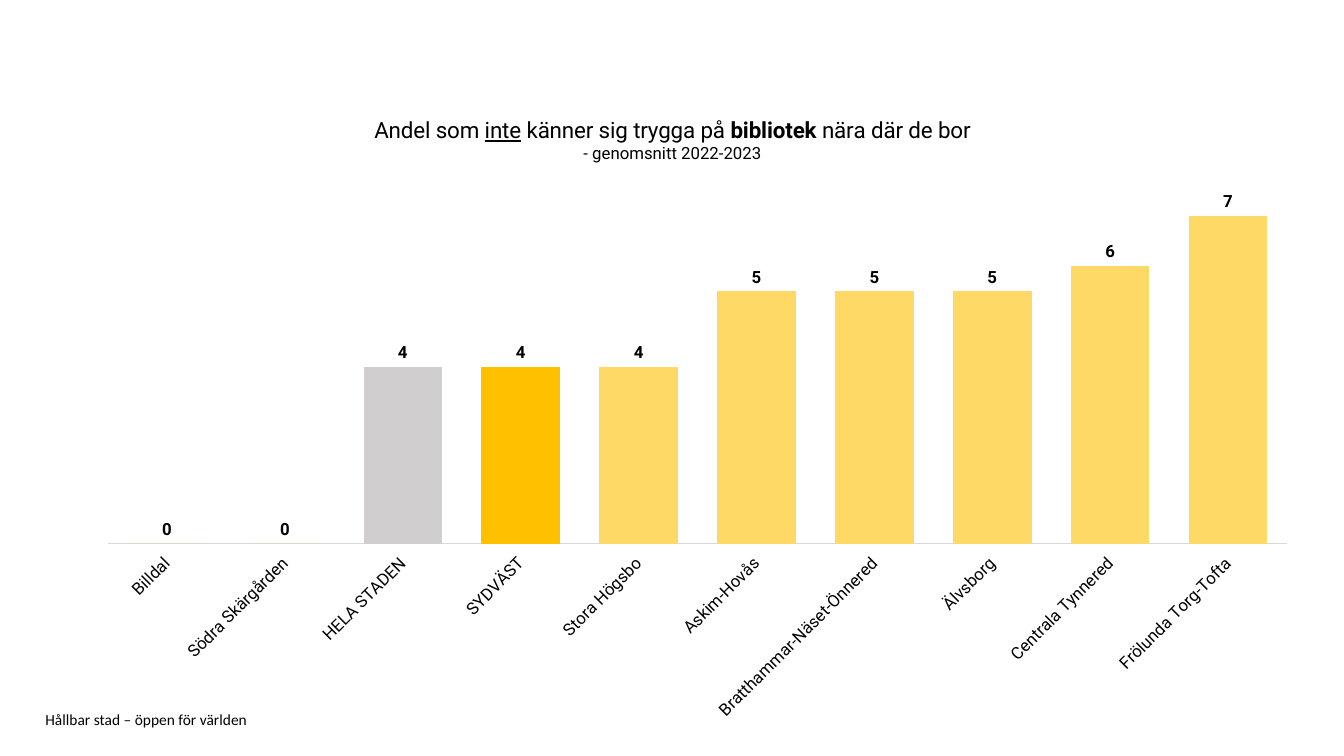
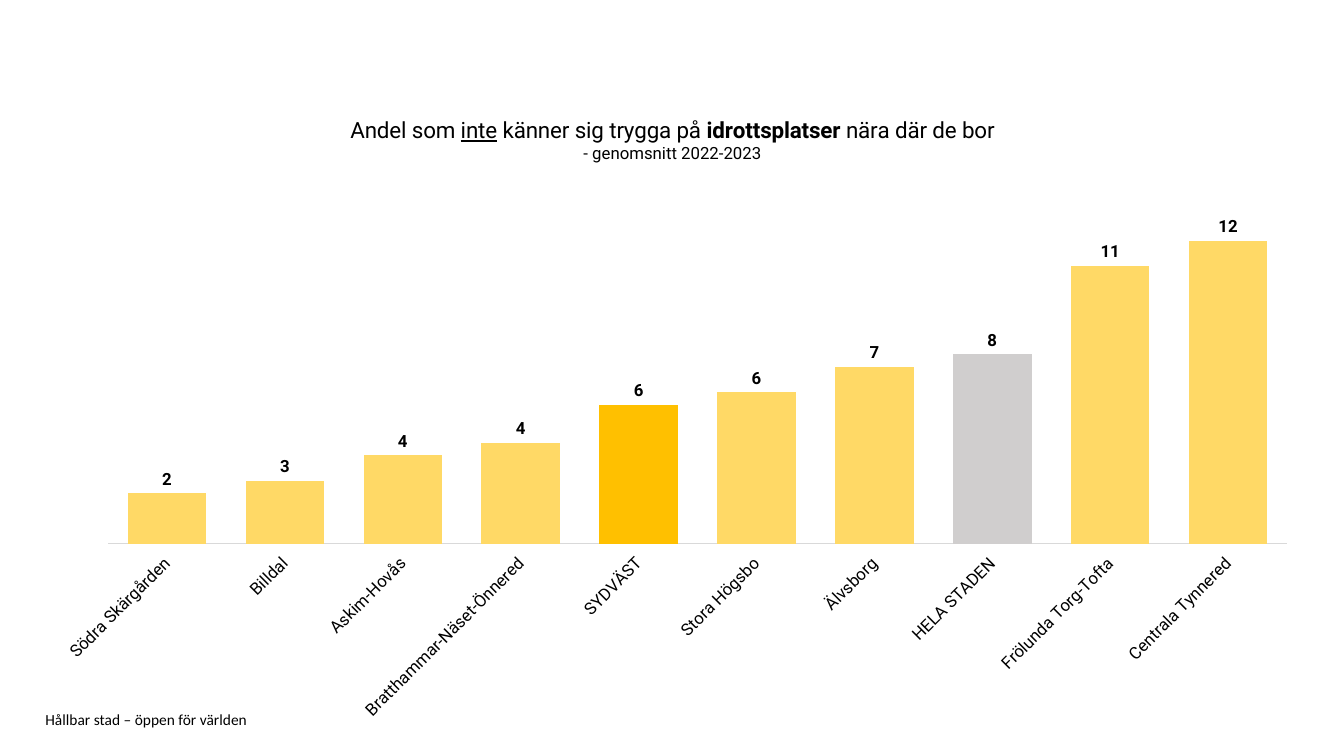
from lxml import etree
from copy import deepcopy
from pptx import Presentation
from pptx.chart.data import CategoryChartData
from pptx.dml.color import RGBColor
from pptx.enum.chart import XL_CHART_TYPE as ChartType
from pptx.enum.chart import XL_LABEL_POSITION as LabelPosition
from pptx.enum.chart import XL_TICK_LABEL_POSITION as TickLabelPosition
from pptx.enum.chart import XL_TICK_MARK as TickMark
from pptx.enum.shapes import PP_PLACEHOLDER as PlaceholderType
from pptx.enum.text import MSO_ANCHOR as Anchor
from pptx.enum.text import PP_ALIGN as Align
from pptx.oxml import parse_xml
from pptx.oxml.ns import nsdecls, qn
from pptx.util import Inches, Pt

BLACK = "000000"
AXIS_GREY = "D9D9D9"
BAR_YELLOW = "FFD966"
HIGHLIGHTS = {"HELA STADEN": "D0CECE", "SYDVÄST": "FFC000"}
CHART_FONT = "Roboto"
FOOTER_FONT = "Calibri"
FOOTER_TEXT = "Hållbar stad – öppen för världen"
SUBTITLE = "- genomsnitt 2022-2023"
PLOT_LAYOUT = {"x": 0.05, "y": 0.15, "w": 0.94, "h": 0.56}

LIBRARY_SHARES = {
    "Billdal": 0,
    "Södra Skärgården": 0,
    "HELA STADEN": 3.5,
    "SYDVÄST": 3.5,
    "Stora Högsbo": 3.5,
    "Askim-Hovås": 5,
    "Bratthammar-Näset-Önnered": 5,
    "Älvsborg": 5,
    "Centrala Tynnered": 5.5,
    "Frölunda Torg-Tofta": 6.5,
}
SPORTS_SHARES = {
    "Södra Skärgården": 2,
    "Billdal": 2.5,
    "Askim-Hovås": 3.5,
    "Bratthammar-Näset-Önnered": 4,
    "SYDVÄST": 5.5,
    "Stora Högsbo": 6,
    "Älvsborg": 7,
    "HELA STADEN": 7.5,
    "Frölunda Torg-Tofta": 11,
    "Centrala Tynnered": 12,
}


def rgb(hex_colour):
    return RGBColor.from_string(hex_colour)


def style_font(font, name, size, bold=False):
    font.name = name
    font.size = Pt(size)
    font.bold = bold
    font.color.rgb = rgb(BLACK)


def fill_solid(fill, hex_colour):
    fill.solid()
    fill.fore_color.rgb = rgb(hex_colour)


def format_layout_footer(layout):
    for placeholder in list(layout.placeholders):
        if placeholder.placeholder_format.type != PlaceholderType.FOOTER:
            continue
        placeholder.left, placeholder.top = Inches(0.45), Inches(7.06)
        placeholder.width, placeholder.height = Inches(9.45), Inches(0.16)
        frame = placeholder.text_frame
        frame.margin_left = frame.margin_right = 0
        frame.margin_top = frame.margin_bottom = 0
        frame.vertical_anchor = Anchor.MIDDLE
        frame.text = FOOTER_TEXT
        paragraph = frame.paragraphs[0]
        paragraph.alignment = Align.LEFT
        style_font(paragraph.runs[0].font, FOOTER_FONT, 11)
        return placeholder


def add_footer(slide, footer):
    slide.shapes._spTree.append(deepcopy(footer.element))


def add_chart_title(chart, place):
    frame = chart.chart_title.text_frame
    heading = frame.paragraphs[0]
    style_font(heading.font, CHART_FONT, 16)
    for text in ("Andel som ", "inte", " känner sig trygga på ", place, " nära där de bor"):
        run = heading.add_run()
        run.text = text
        style_font(run.font, CHART_FONT, 16, bold=text == place)
        run.font.underline = text == "inte"
    subtitle = frame.add_paragraph()
    style_font(subtitle.font, CHART_FONT, 12)
    run = subtitle.add_run()
    run.text = SUBTITLE
    style_font(run.font, CHART_FONT, 12)
    chart.chart_title.include_in_layout = False


def set_plot_layout(chart):
    plot_area = chart.element.find(".//" + qn("c:plotArea"))
    for old_layout in plot_area.findall(qn("c:layout")):
        plot_area.remove(old_layout)
    layout = parse_xml(f"<c:layout {nsdecls('c')}><c:manualLayout/></c:layout>")
    settings = {"layoutTarget": "inner", "xMode": "edge", "yMode": "edge", **PLOT_LAYOUT}
    for tag, value in settings.items():
        etree.SubElement(layout[0], qn(f"c:{tag}")).set("val", str(value))
    plot_area.insert(0, layout)


def format_axes(chart, maximum):
    values = chart.value_axis
    values.minimum_scale, values.maximum_scale = 0, maximum
    values.has_major_gridlines = False
    values.visible = False
    categories = chart.category_axis
    categories.major_tick_mark = categories.minor_tick_mark = TickMark.NONE
    categories.tick_label_position = TickLabelPosition.LOW
    categories.format.line.color.rgb = rgb(AXIS_GREY)
    categories.format.line.width = Pt(0.75)
    style_font(categories.tick_labels.font, CHART_FONT, 12)
    body = categories._element.find(qn("c:txPr")).find(qn("a:bodyPr"))
    body.set("rot", "-2700000")
    body.set("vert", "horz")


def format_bars(plot, districts):
    plot.gap_width = 50
    plot.vary_by_categories = False
    series = plot.series[0]
    fill_solid(series.format.fill, BAR_YELLOW)
    for index, district in enumerate(districts):
        if district in HIGHLIGHTS:
            fill_solid(series.points[index].format.fill, HIGHLIGHTS[district])
    plot.has_data_labels = True
    labels = plot.data_labels
    labels.show_value = True
    labels.position = LabelPosition.OUTSIDE_END
    labels.number_format = "0"
    labels.number_format_is_linked = False
    style_font(labels.font, CHART_FONT, 12, bold=True)


def add_share_chart(slide, place, shares, maximum):
    data = CategoryChartData()
    data.categories = list(shares)
    name = f"Andel som inte känner sig trygga på {place} nära där de bor {SUBTITLE}"
    data.add_series(name, list(shares.values()))
    chart = slide.shapes.add_chart(
        ChartType.COLUMN_CLUSTERED,
        Inches(0.45), Inches(0.95), Inches(12.44), Inches(6.26), data,
    ).chart
    chart.has_legend = False
    style_font(chart.font, CHART_FONT, 12)
    add_chart_title(chart, place)
    set_plot_layout(chart)
    format_axes(chart, maximum)
    format_bars(chart.plots[0], shares)


def main():
    presentation = Presentation()
    presentation.slide_width = Inches(13.33)
    presentation.slide_height = Inches(7.5)
    layout = presentation.slide_layouts.get_by_name("Blank")
    footer = format_layout_footer(layout)
    for place, shares, maximum in (
        ("bibliotek", LIBRARY_SHARES, 7),
        ("idrottsplatser", SPORTS_SHARES, 14),
    ):
        slide = presentation.slides.add_slide(layout)
        add_footer(slide, footer)
        add_share_chart(slide, place, shares, maximum)
    presentation.save("out.pptx")


if __name__ == "__main__":
    main()
